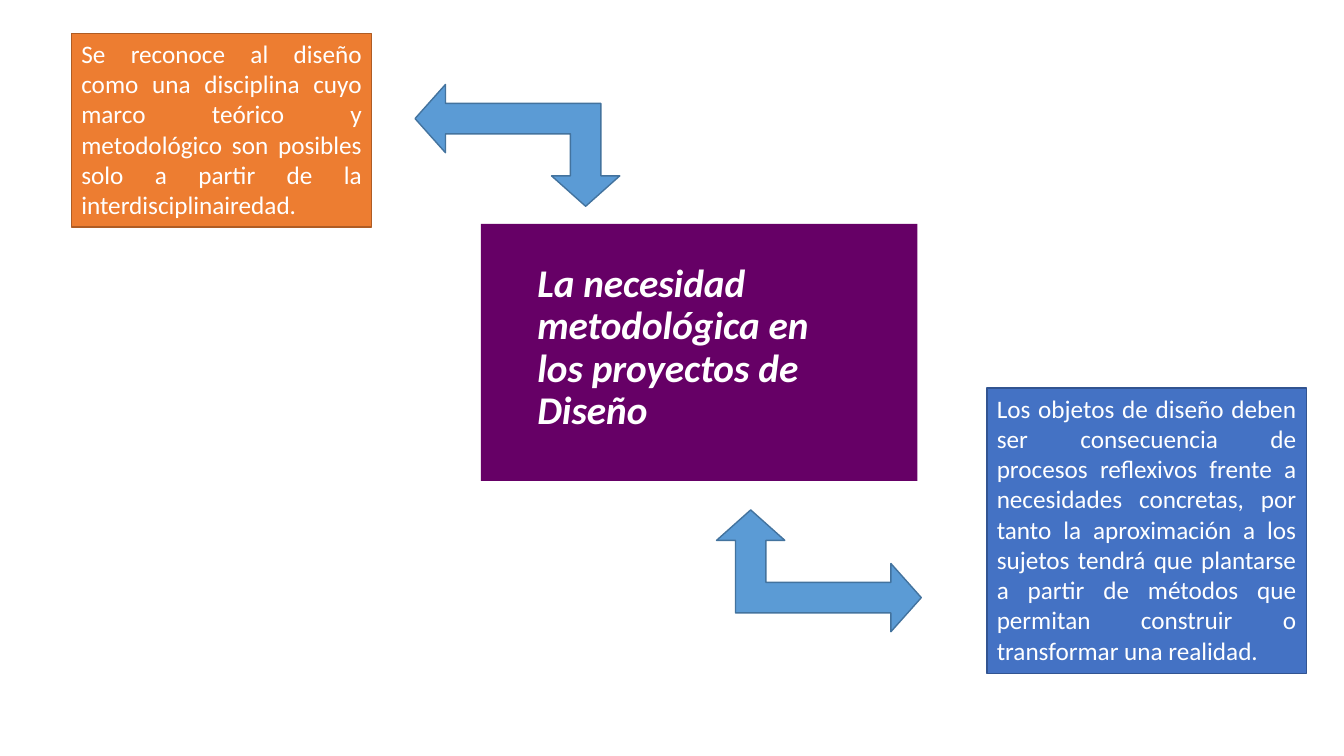
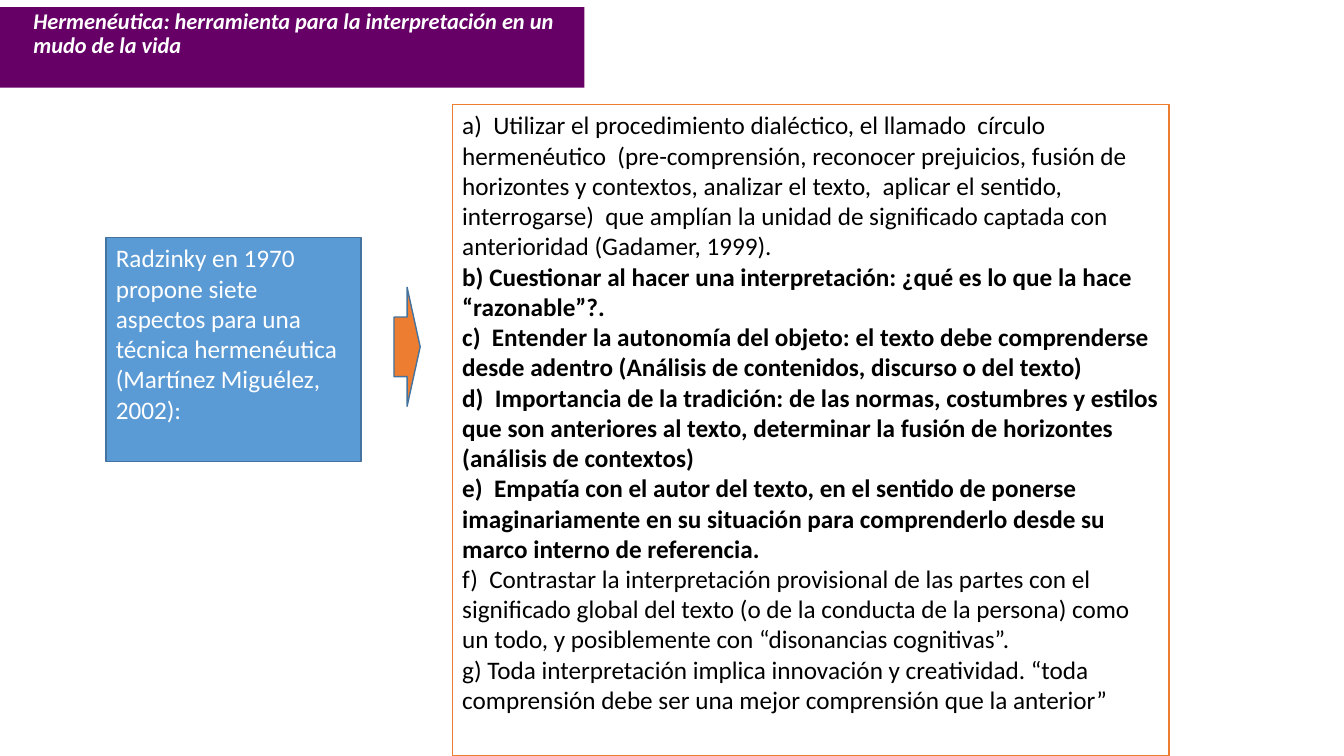
import pptx
import pptx.util
import pptx.dml.color
import pptx.enum.shapes
import pptx.enum.text

Cm = pptx.util.Cm
Pt = pptx.util.Pt
MSO_SHAPE = pptx.enum.shapes.MSO_SHAPE
PP_ALIGN = pptx.enum.text.PP_ALIGN
MSO_ANCHOR = pptx.enum.text.MSO_ANCHOR

FONT = "Calibri"
COLORS = {
    "purple": "660066", "white": "FFFFFF", "black": "000000",
    "orange": "ED7D31", "dark_orange": "AF5C24",
    "blue": "4472C4", "dark_blue": "325491",
    "sky": "5B9BD5", "dark_sky": "43739E",
}
RGB = {name: pptx.dml.color.RGBColor.from_string(h) for name, h in COLORS.items()}

prs = pptx.Presentation()
prs.slide_width, prs.slide_height = Cm(33.87), Cm(19.05)


def add_titled_slide(text, size, box, margins):
    """Add a slide whose title is a purple band; margins are left, right, bottom."""
    s = prs.slides.add_slide(prs.slide_layouts[5])
    title = s.shapes.title
    title.left, title.top, title.width, title.height = map(Cm, box)
    title.fill.solid()
    title.fill.fore_color.rgb = RGB["purple"]
    tf = title.text_frame
    tf.word_wrap = True
    tf.auto_size = pptx.enum.text.MSO_AUTO_SIZE.NONE
    tf.vertical_anchor = MSO_ANCHOR.MIDDLE
    tf.margin_left, tf.margin_right, tf.margin_bottom = map(Cm, margins)
    tf.margin_top = 0
    p = tf.paragraphs[0]
    p.alignment = PP_ALIGN.LEFT
    p.line_spacing = 0.9
    r = p.add_run()
    r.text = text
    r.font.name, r.font.size = FONT, Pt(size)
    r.font.bold = r.font.italic = True
    r.font.color.rgb = RGB["white"]
    return s


def add_box(s, kind, box, fill, line, items=(), color="white", align=PP_ALIGN.LEFT):
    """Add an outlined shape; items are (text, bold) paragraphs."""
    sp = s.shapes.add_shape(kind, *map(Cm, box))
    sp.shadow.inherit = False
    sp.fill.solid()
    sp.fill.fore_color.rgb = RGB[fill]
    sp.line.color.rgb = RGB[line]
    sp.line.width = Pt(1)
    tf = sp.text_frame
    tf.word_wrap = True
    tf.vertical_anchor = MSO_ANCHOR.TOP
    for i, (text, bold) in enumerate(items):
        p = tf.add_paragraph() if i else tf.paragraphs[0]
        p.alignment = align
        r = p.add_run()
        r.text = text
        r.font.name, r.font.size, r.font.bold = FONT, Pt(18), bold
        r.font.color.rgb = RGB[color]
    return sp


# Slide 1: central idea with two linked statements
s = add_titled_slide("La necesidad metodológica en los proyectos de Diseño", 28,
                     (12.12, 5.64, 11, 6.48), (1.42, 1.93, 0.2))

statements = [
    ((1.8, 0.84, 7.57, 4.88), "orange", "dark_orange",
     "Se reconoce al diseño como una disciplina cuyo marco teórico y metodológico "
     "son posibles solo a partir de la interdisciplinairedad."),
    ((24.87, 9.78, 8.05, 7.19), "blue", "dark_blue",
     "Los objetos de diseño deben ser consecuencia de procesos reflexivos frente a "
     "necesidades concretas, por tanto la aproximación a los sujetos tendrá que "
     "plantarse a partir de métodos que permitan construir o transformar una realidad."),
]
for box, fill, line, text in statements:
    add_box(s, MSO_SHAPE.RECTANGLE, box, fill, line, [(text, False)],
            align=PP_ALIGN.JUSTIFY)

# Bent arrows, mirrored to point at each statement
for left, top, flip in [(10.46, 2.13, "flipV"), (18.06, 12.85, "flipH")]:
    sp = add_box(s, MSO_SHAPE.LEFT_UP_ARROW, (left, top, 5.16, 3.07), "sky", "dark_sky")
    for i, value in enumerate((0.25, 0.28, 0.25)):
        sp.adjustments[i] = value
    sp._element.spPr.xfrm.set(flip, "1")

# Slide 2: author on the left, seven aspects on the right
s = add_titled_slide(
    "Hermenéutica: herramienta para la interpretación en un mudo de la vida", 16,
    (0, 0.18, 14.73, 2.03), (0.84, 0.5, 0.68))

add_box(s, MSO_SHAPE.RECTANGLE, (2.67, 5.99, 6.43, 5.64), "sky", "dark_sky",
        [("Radzinky en 1970 propone siete aspectos para una técnica hermenéutica "
          "(Martínez Miguélez, 2002):", False)])

aspects = [
    ("a)  Utilizar el procedimiento dialéctico, el llamado  círculo hermenéutico  "
     "(pre-comprensión, reconocer prejuicios, fusión de horizontes y contextos, "
     "analizar el texto,  aplicar el sentido, interrogarse)  que amplían la unidad "
     "de significado captada con anterioridad (Gadamer, 1999).", False),
    ("b) Cuestionar al hacer una interpretación: ¿qué es lo que la hace "
     "“razonable”?.", True),
    ("c)  Entender la autonomía del objeto: el texto debe comprenderse desde adentro "
     "(Análisis de contenidos, discurso o del texto)", True),
    ("d)  Importancia de la tradición: de las normas, costumbres y estilos que son "
     "anteriores al texto, determinar la fusión de horizontes (análisis de contextos)",
     True),
    ("e)  Empatía con el autor del texto, en el sentido de ponerse imaginariamente en "
     "su situación para comprenderlo desde su marco interno de referencia.", True),
    ("f)  Contrastar la interpretación provisional de las partes con el significado "
     "global del texto (o de la conducta de la persona) como un todo, y posiblemente "
     "con “disonancias cognitivas”.", False),
    ("g) Toda interpretación implica innovación y creatividad. “toda comprensión debe "
     "ser una mejor comprensión que la anterior”", False),
]
add_box(s, MSO_SHAPE.RECTANGLE, (11.4, 2.64, 18.06, 16.41), "white", "orange",
        aspects, color="black")
add_box(s, MSO_SHAPE.RIGHT_ARROW, (9.93, 7.24, 0.66, 3), "orange", "dark_sky")

prs.save("out.pptx")
